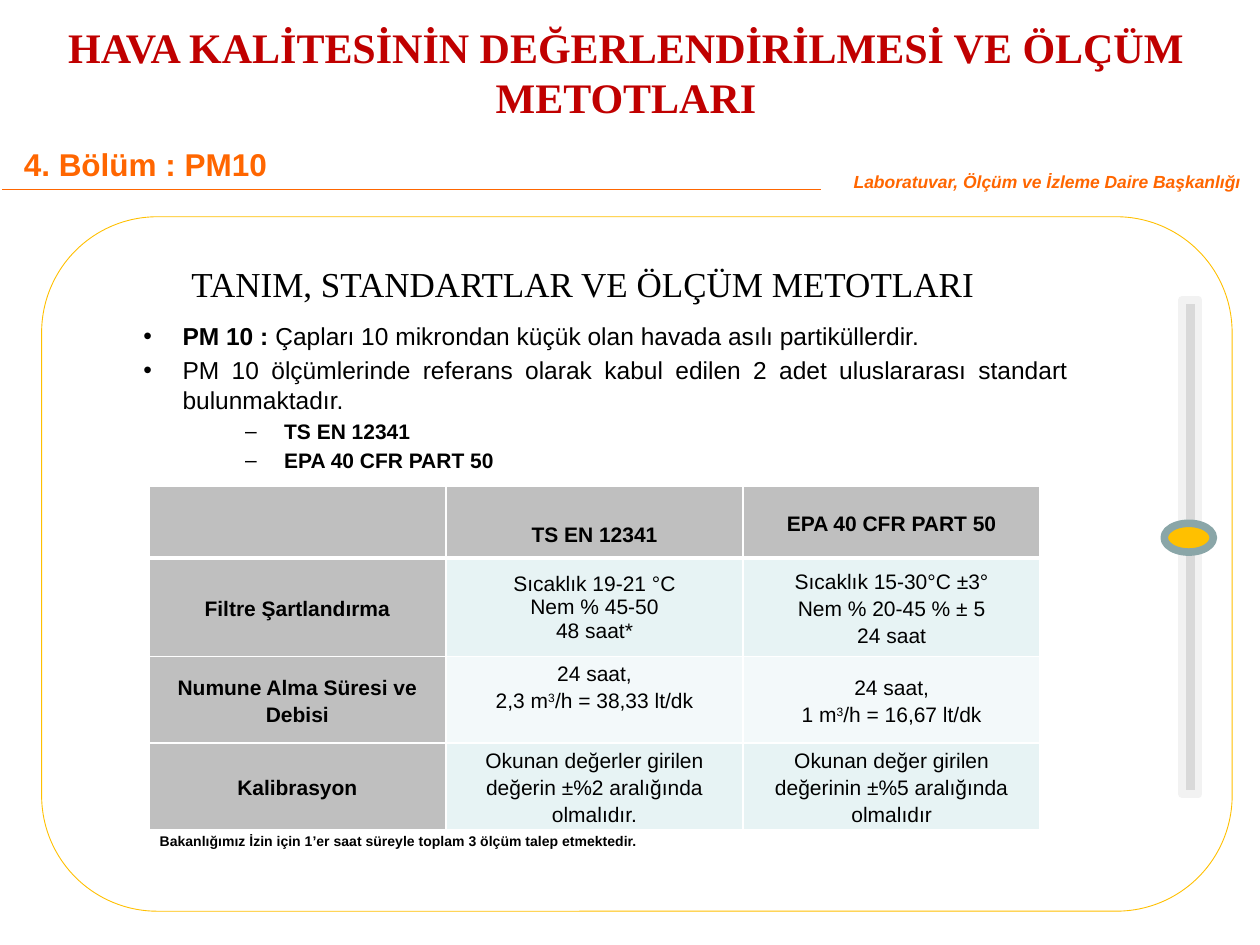
from lxml import etree
from pptx import Presentation
from pptx import util as u
from pptx.dml.color import RGBColor
from pptx.enum import shapes, text
from pptx.oxml import ns

ALIGN = text.PP_ALIGN
BLACK = "000000"
CONDITIONS = [
    [[], ["TS EN 12341"], ["EPA 40 CFR PART 50"]],
    [["Filtre Şartlandırma"],
     ["Sıcaklık 19-21 °C", "Nem % 45-50", "48 saat*"],
     ["Sıcaklık 15-30°C ±3°", "Nem % 20-45 % ± 5", "24 saat"]],
    [["Numune Alma Süresi ve Debisi"],
     ["24 saat,", "2,3 m^3^/h = 38,33 lt/dk"],
     ["24 saat,", "1 m^3^/h = 16,67 lt/dk"]],
    [["Kalibrasyon"],
     ["Okunan değerler girilen değerin ±%2 aralığında olmalıdır."],
     ["Okunan değer girilen değerinin ±%5 aralığında olmalıdır"]],
]
DEFINITIONS = [
    (0, [("PM 10 : ", True),
         ("Çapları 10 mikrondan küçük olan havada asılı partiküllerdir.", False)]),
    (0, [("PM 10 ölçümlerinde referans olarak kabul edilen 2 adet "
          "uluslararası standart bulunmaktadır.", False)]),
    (1, [("TS EN 12341", True)]),
    (1, [("EPA 40 CFR PART 50", True)]),
]


def colour(value):
    """Turn a hex string into a colour."""
    return RGBColor.from_string(value)


def place(box, left, top, width, height):
    """Return lengths for a part measured from the corner of its box."""
    return [u.Cm(v) for v in (box[0] + left, box[1] + top, width, height)]


def element(parent, tag, **attributes):
    """Append a drawing element to a parent."""
    return etree.SubElement(parent, ns.qn(tag), attributes)


def style(font, **formats):
    """Set font attributes from format values."""
    font.color.rgb = colour(formats.pop("color", BLACK))
    formats = {"name": "Arial", **formats}
    for name, value in formats.items():
        setattr(font, name, value)


def add_frame(slide, area, anchor=text.MSO_ANCHOR.TOP):
    """Add a wrapping text frame."""
    frame = slide.shapes.add_textbox(*area).text_frame
    frame.word_wrap = True
    frame.vertical_anchor = anchor
    return frame


def add_label(slide, area, wording, align=ALIGN.LEFT, spacing=1.0,
              anchor=text.MSO_ANCHOR.TOP, **formats):
    """Add a text box with one paragraph."""
    paragraph = add_frame(slide, area, anchor).paragraphs[0]
    paragraph.alignment, paragraph.line_spacing = align, spacing
    run = paragraph.add_run()
    run.text = wording
    style(run.font, **formats)


def add_outline(slide, kind, area, line, width, fill=None):
    """Add a preset shape with an outline and an optional fill."""
    shape = slide.shapes.add_shape(kind, *area)
    shape.shadow.inherit = False
    shape.line.color.rgb = colour(line)
    shape.line.width = u.Pt(width)
    if fill:
        shape.fill.solid()
        shape.fill.fore_color.rgb = colour(fill)
    else:
        shape.fill.background()


def add_header(slide, box):
    """Place the title, section name, office name and rule."""
    add_label(slide, place(box, -0.08, 0.43, 25.4, 2.03),
              "HAVA KALİTESİNİN DEĞERLENDİRİLMESİ VE ÖLÇÜM METOTLARI",
              ALIGN.CENTER, anchor=text.MSO_ANCHOR.MIDDLE,
              name="Times New Roman", size=u.Pt(24), bold=True, color="C00000")
    add_label(slide, place(box, 0.23, 2.79, 24.97, 1.4), "4. Bölüm : PM10",
              size=u.Pt(18), bold=True, color="FF6600")
    add_label(slide, place(box, 16.56, 3.38, 8.69, 0.61),
              "Laboratuvar, Ölçüm ve İzleme Daire Başkanlığı", ALIGN.RIGHT, 0.85,
              size=u.Pt(10), bold=True, italic=True, color="FF6600")
    left, top, width, _ = place(box, 0.05, 3.81, 16.51, 0)
    rule = slide.shapes.add_connector(
        shapes.MSO_CONNECTOR.STRAIGHT, left, top, left + width, top)
    rule.line.color.rgb = colour("FF6600")
    rule.line.width = u.Pt(0.25)
    element(rule.element.spPr, "a:effectLst")


def add_slider(slide, box):
    """Place the rail and its knob."""
    add_outline(slide, shapes.MSO_SHAPE.RECTANGLE,
                place(box, 0.36, 0, 0.33, 9.96), "F2F2F2", 4.33, "D9D9D9")
    add_outline(slide, shapes.MSO_SHAPE.FLOWCHART_CONNECTOR,
                place(box, 0, 4.5, 0.99, 0.58), "8AA6A8", 4.33, "FFC000")


def add_definitions(slide, box):
    """Place the heading and the bulleted definitions."""
    add_label(slide, place(box, 0.97, 0, 17, 1.12),
              "TANIM, STANDARTLAR VE ÖLÇÜM METOTLARI",
              name="Times New Roman", size=u.Pt(20))
    frame = add_frame(slide, place(box, 0, 1.19, 19.15, 3.4))
    for index, (level, runs) in enumerate(DEFINITIONS):
        paragraph = frame.add_paragraph() if index else frame.paragraphs[0]
        size = (14, 12)[level]
        paragraph.level, paragraph.alignment = level, ALIGN.JUSTIFY
        if index:
            paragraph.space_before = u.Pt(size * 0.2)
        properties = paragraph._p.get_or_add_pPr()
        properties.set("marL", str(u.Cm((0.79, 2.84)[level])))
        properties.set("indent", str(u.Cm(-0.79)))
        element(properties, "a:buFont", typeface="Arial")
        element(properties, "a:buChar", char="•–"[level])
        for wording, bold in runs:
            run = paragraph.add_run()
            run.text = wording
            style(run.font, size=u.Pt(size), bold=bold)


def paint_cell(cell, fill, bottom):
    """Give a cell white borders and a fill."""
    properties = cell._tc.get_or_add_tcPr()
    for side, width in {"L": 1, "R": 1, "T": 1, "B": bottom}.items():
        border = element(properties, f"a:ln{side}", w=str(u.Pt(width)))
        element(element(border, "a:solidFill"), "a:srgbClr", val="FFFFFF")
    cell.fill.solid()
    cell.fill.fore_color.rgb = colour(fill)


def fill_cell(cell, lines, bold, spacing):
    """Write centred lines, raising the parts between carets."""
    cell.vertical_anchor = text.MSO_ANCHOR.MIDDLE
    margins = {"left": 0.18, "right": 0.18, "top": 0, "bottom": 0}
    for side, margin in margins.items():
        setattr(cell, f"margin_{side}", u.Cm(margin))
    for index, line in enumerate(lines):
        frame = cell.text_frame
        paragraph = frame.add_paragraph() if index else frame.paragraphs[0]
        paragraph.alignment, paragraph.line_spacing = ALIGN.CENTER, spacing
        for order, part in enumerate(line.split("^")):
            run = paragraph.add_run()
            run.text = part
            style(run.font, size=u.Pt(12), bold=bold)
            if order % 2:
                run.font._element.set("baseline", "30000")


def add_conditions(slide, box):
    """Place the table of measuring conditions and its note."""
    table = slide.shapes.add_table(4, 3, *place(box, 0, 0, 17.97, 6.93)).table
    for column in table.columns:
        column.width = u.Cm(5.99)
    for row, height in zip(table.rows, (1.45, 1.98, 1.75, 1.75)):
        row.height = u.Cm(height)
    for r, row in enumerate(CONDITIONS):
        for c, lines in enumerate(row):
            cell = table.cell(r, c)
            label = r == 0 or c == 0
            band = "F3F9FA" if r == 2 else "E7F3F4"
            paint_cell(cell, "BFBFBF" if label else band, 1 if r else 3)
            fill_cell(cell, lines, label, 1.0 if (r, c) == (1, 1) else 1.15)
    table.cell(0, 1).margin_top = u.Cm(0.45)
    table.cell(2, 1).margin_bottom = u.Cm(0.56)
    add_label(slide, place(box, -0.03, 6.86, 18.01, 0.61),
              "Bakanlığımız İzin için 1’er saat süreyle toplam 3 ölçüm talep etmektedir.",
              ALIGN.JUSTIFY, size=u.Pt(8), bold=True)


def main():
    """Build the slide and save it."""
    deck = Presentation()
    deck.slide_width, deck.slide_height = u.Cm(25.4), u.Cm(19.05)
    slide = deck.slides.add_slide(deck.slide_layouts[6])
    add_outline(slide, shapes.MSO_SHAPE.ROUNDED_RECTANGLE,
                place((0, 0), 0.84, 4.37, 24, 14), "FFC000", 0.5)
    add_slider(slide, (23.47, 6.05))
    add_definitions(slide, (2.64, 5.16))
    add_conditions(slide, (3, 9.8))
    add_header(slide, (0, 0))
    deck.save("out.pptx")


if __name__ == "__main__":
    main()
